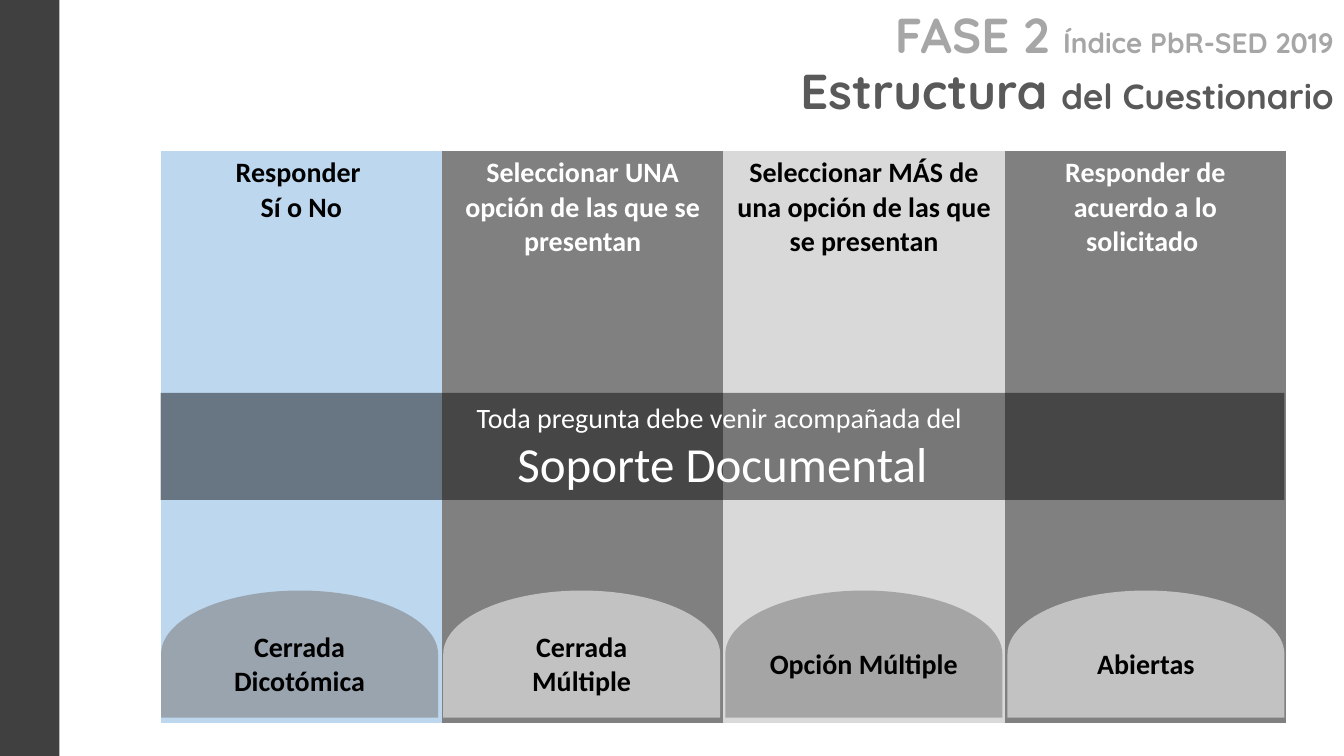
from dataclasses import dataclass

from lxml.etree import SubElement
from pptx import Presentation
from pptx.dml.color import RGBColor
from pptx.enum.shapes import MSO_SHAPE as Shape
from pptx.enum.text import MSO_ANCHOR as Anchor, MSO_AUTO_SIZE as AutoSize, PP_ALIGN as Align
from pptx.oxml.ns import qn
from pptx.util import Cm, Pt


@dataclass(frozen=True)
class Theme:
    heading_font: str = "Quicksand"
    body_font: str = "Calibri"
    bar: str = "404040"
    phase: str = "A6A6A6"
    title: str = "595959"
    black: str = "000000"
    white: str = "FFFFFF"
    blue: str = "BDD7EE"
    gray: str = "808080"
    light: str = "D9D9D9"
    pale: str = "F2F2F2"
    large: int = 35
    medium: int = 25
    small: int = 20


def write(frame, paragraphs, font, color, bold=False, align=Align.CENTER):
    for index, spans in enumerate(paragraphs):
        para = frame.add_paragraph() if index else frame.paragraphs[0]
        para.alignment = align
        for text, size in spans:
            span = para.add_run()
            span.text = text
            span.font.name = font
            span.font.size = Pt(size)
            span.font.bold = bold
            span.font.color.rgb = RGBColor.from_string(color)


class SlideBuilder:
    def __init__(self, slide, theme):
        self.slide = slide
        self.theme = theme

    def place(self, box, left, top, width, height):
        box.left, box.top = Cm(left), Cm(top)
        box.width, box.height = Cm(width), Cm(height)

    def heading(self, box, area, spans, color):
        self.place(box, *area)
        frame = box.text_frame
        frame.word_wrap = True
        frame.auto_size = AutoSize.NONE
        frame.vertical_anchor = Anchor.TOP
        write(frame, [spans], self.theme.heading_font, color, bold=True, align=Align.RIGHT)

    def title(self, area, spans, color):
        self.heading(self.slide.shapes.title, area, spans, color)

    def label(self, area, spans, color):
        box = self.slide.shapes.add_textbox(*map(Cm, area))
        self.heading(box, area, spans, color)

    def shape(self, kind, area, fill, opacity=100):
        box = self.slide.shapes.add_shape(kind, *map(Cm, area))
        box.shadow.inherit = False
        box.line.fill.background()
        box.fill.solid()
        box.fill.fore_color.rgb = RGBColor.from_string(fill)
        if opacity < 100:
            color = box.fill._xPr.find(qn("a:solidFill"))[0]
            SubElement(color, qn("a:alpha"), val=str(opacity * 1000))
        box.text_frame.word_wrap = True
        box.text_frame.vertical_anchor = Anchor.MIDDLE
        return box

    def dome(self, center, middle, text, fill):
        thickness, span = 3.2, 6.98
        area = (center - thickness / 2, middle - span / 2, thickness, span)
        box = self.shape(Shape.FLOWCHART_DELAY, area, fill, opacity=58)
        box.rotation = 270
        frame = box.text_frame
        frame.margin_left = frame.margin_right = frame.margin_top = frame.margin_bottom = 0
        frame._txBody.bodyPr.set("vert", "vert")
        write(frame, [[(text, self.theme.small)]], self.theme.body_font, self.theme.black, bold=True)

    def table(self, area, columns):
        table = self.slide.shapes.add_table(1, len(columns), *map(Cm, area)).table
        table.first_row = table.horz_banding = False
        for index, (lines, fill, color) in enumerate(columns):
            table.columns[index].width = Cm(area[2] / len(columns))
            cell = table.cell(0, index)
            properties = cell._tc.get_or_add_tcPr()
            for side in ("lnL", "lnR", "lnT", "lnB"):
                border = SubElement(properties, qn(f"a:{side}"), w="0")
                SubElement(border, qn("a:noFill"))
            cell.fill.solid()
            cell.fill.fore_color.rgb = RGBColor.from_string(fill)
            paragraphs = [[(line, self.theme.small)] for line in lines]
            write(cell.text_frame, paragraphs, self.theme.body_font, color, bold=True)


def main():
    theme = Theme()
    deck = Presentation()
    deck.slide_width, deck.slide_height = Cm(33.87), Cm(19.05)
    page = SlideBuilder(deck.slides.add_slide(deck.slide_layouts[5]), theme)

    page.shape(Shape.RECTANGLE, (0, 0, 1.5, 19.05), theme.bar)
    page.label((9.8, 0, 24.06, 1.8),
               [("FASE 2 ", theme.large), ("Índice PbR-SED 2019", theme.small)], theme.phase)
    page.title((16.47, 1.4, 17.39, 1.75),
               [("Estructura ", theme.large), ("del Cuestionario", theme.medium)], theme.title)

    page.table((4.05, 3.81, 28.36, 14.4), [
        (["Responder ", "Sí o No"], theme.blue, theme.black),
        (["Seleccionar UNA opción de las que se presentan"], theme.gray, theme.white),
        (["Seleccionar MÁS de una opción de las que se presentan"], theme.light, theme.black),
        (["Responder de acuerdo a lo solicitado "], theme.gray, theme.white),
    ])

    domes = [
        ("Cerrada Dicotómica", theme.gray),
        ("Cerrada Múltiple", theme.pale),
        ("Opción Múltiple", theme.gray),
        ("Abiertas", theme.pale),
    ]
    for index, (text, fill) in enumerate(domes):
        page.dome(7.55 + index * 7.11, 16.48, text, fill)

    band = page.shape(Shape.RECTANGLE, (4.05, 9.9, 28.32, 2.7), theme.black, opacity=45)
    write(band.text_frame,
          [[("Toda pregunta debe venir acompañada del ", theme.small)],
           [("Soporte Documental", theme.large)]],
          theme.body_font, theme.white)

    deck.save("out.pptx")


if __name__ == "__main__":
    main()
